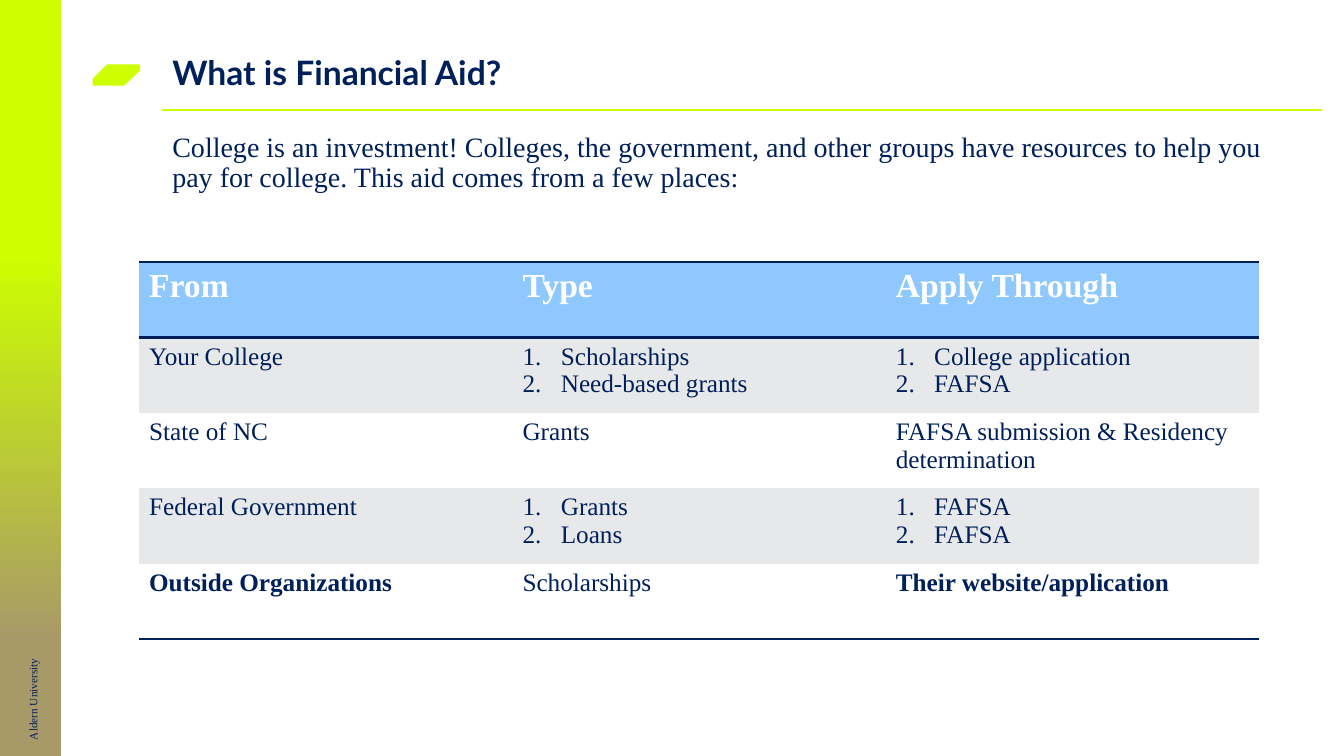
"""Builds the financial aid overview slide with its table of aid sources."""
from lxml.etree import SubElement
from pptx import Presentation
from pptx.dml.color import RGBColor
from pptx.enum.shapes import MSO_CONNECTOR as Connector, MSO_SHAPE as Shape
from pptx.enum.text import MSO_ANCHOR as Anchor, PP_ALIGN as Align
from pptx.oxml import parse_xml
from pptx.oxml.ns import nsdecls, qn
from pptx.util import Inches, Pt

NAVY, LIME, SAND, SKY, GREY, WHITE = "00205B", "CDFF00", "A89968", "8FC8FF", "E7E8EA", "FFFFFF"
SERIF = "Times New Roman"
LEFT, RIGHT = 12.08, 98.35

deck = Presentation()
deck.slide_width, deck.slide_height = Inches(13.33), Inches(7.5)
slide = deck.slides.add_slide(deck.slide_layouts[6])
shapes = slide.shapes


def share(*percents):
    """Turn alternating horizontal and vertical percents of the slide into lengths."""
    sides = (deck.slide_width, deck.slide_height)
    return [int(sides[i % 2] * percent / 100) for i, percent in enumerate(percents)]


def write(paragraph, words, color, **formats):
    """Put formatted words into a paragraph."""
    paragraph.alignment = Align.LEFT
    run = paragraph.add_run()
    run.text = words
    run.font.color.rgb = RGBColor.from_string(color)
    for name, value in formats.items():
        setattr(run.font, name, value)


title_rule = shapes.add_connector(Connector.STRAIGHT, *share(LEFT, 14.53, RIGHT, 14.53))
title_rule.line.color.rgb = RGBColor.from_string(LIME)
title_rule.line.width = Pt(1)
SubElement(title_rule.element.spPr, qn("a:effectLst"))

side_band = shapes.add_shape(Shape.RECTANGLE, *share(-0.98, -0.67, 5.55, 103.33))
side_band.fill.gradient()
side_band.fill.gradient_angle = 270
for stop, color, position in zip(side_band.fill.gradient_stops, (LIME, SAND), (0.33, 0.83)):
    stop.color.rgb = RGBColor.from_string(color)
    stop.position = position

marker_corners = [(10.43, 8.53), (10.43, 9.33), (9.23, 11.33), (6.9, 11.33), (6.9, 10.4), (7.95, 8.53)]
first, *others = [share(*corner) for corner in marker_corners]
outline = shapes.build_freeform(*first)
outline.add_line_segments(others)
marker = outline.convert_to_shape()
marker.fill.solid()
marker.fill.fore_color.rgb = RGBColor.from_string(LIME)
for accent in (side_band, marker):
    accent.line.fill.background()
    accent.shadow.inherit = False

texts = [
    ("Aldern University", (-10.28, 74.93, 25.51, 3.2), 270, Anchor.TOP, {},
     dict(size=Pt(8), name=SERIF)),
    ("What is Financial Aid?", (LEFT, 5.33, RIGHT - LEFT, 9.2), 0, Anchor.MIDDLE,
     dict(line_spacing=0.9), dict(size=Pt(24), name="Lato", bold=True)),
    ("College is an investment! Colleges, the government, and other groups have resources to help you "
     "pay for college. This aid comes from a few places:", (LEFT, 16.93, 83.35, 77.73), 0, Anchor.TOP,
     dict(line_spacing=0.9, space_before=Pt(10)), dict(size=Pt(20), name=SERIF)),
]
for words, place, turn, anchor, spacing, formats in texts:
    box = shapes.add_textbox(*share(*place))
    box.rotation = turn
    box.text_frame.word_wrap = True
    box.text_frame.vertical_anchor = anchor
    paragraph = box.text_frame.paragraphs[0]
    for name, value in spacing.items():
        setattr(paragraph, name, value)
    write(paragraph, words, NAVY, **formats)

aid_rows = [
    ("From", "Type", "Apply Through"),
    ("Your College", ["Scholarships", "Need-based grants"], ["College application", "FAFSA"]),
    ("State of NC", "Grants", "FAFSA submission & Residency determination"),
    ("Federal Government", ["Grants", "Loans"], ["FAFSA", "FAFSA"]),
    ("Outside Organizations", "Scholarships", "Their website/application"),
]
bold_words = {*aid_rows[0], "Outside Organizations", "Their website/application"}
row_fills = [SKY, GREY, WHITE, GREY, WHITE]
row_borders = {0: ("lnB", "lnT"), len(aid_rows) - 1: ("lnB",)}

aid_frame = shapes.add_table(len(aid_rows), len(aid_rows[0]), *share(10.35, 34.67, 83.35, 49.87))
for style in aid_frame.element.iter(qn("a:tableStyleId")):
    style.text = "{2D5ABB26-0587-4C30-8999-92F81FD0307C}"

for r, aid_row in enumerate(aid_rows):
    for c, entry in enumerate(aid_row):
        cell = aid_frame.table.cell(r, c)
        cell.fill.solid()
        cell.fill.fore_color.rgb = RGBColor.from_string(row_fills[r])
        numbered = isinstance(entry, list)
        for i, words in enumerate(entry if numbered else [entry]):
            paragraph = cell.text_frame.paragraphs[0] if i == 0 else cell.text_frame.add_paragraph()
            write(paragraph, words, NAVY if r else WHITE, name=SERIF,
                  size=Pt(18 if r else 24), bold=words in bold_words)
            if numbered:
                properties = paragraph._p.get_or_add_pPr()
                properties.set("marL", str(Inches(0.38)))
                properties.set("indent", str(-Inches(0.38)))
                SubElement(properties, qn("a:buAutoNum"), type="arabicPeriod")
        for side in row_borders.get(r, ()):
            cell._tc.get_or_add_tcPr().insert(0, parse_xml(
                f'<a:{side} {nsdecls("a")} w="{Pt(2)}"><a:solidFill>'
                f'<a:srgbClr val="{NAVY}"/></a:solidFill></a:{side}>'))

deck.save("out.pptx")
